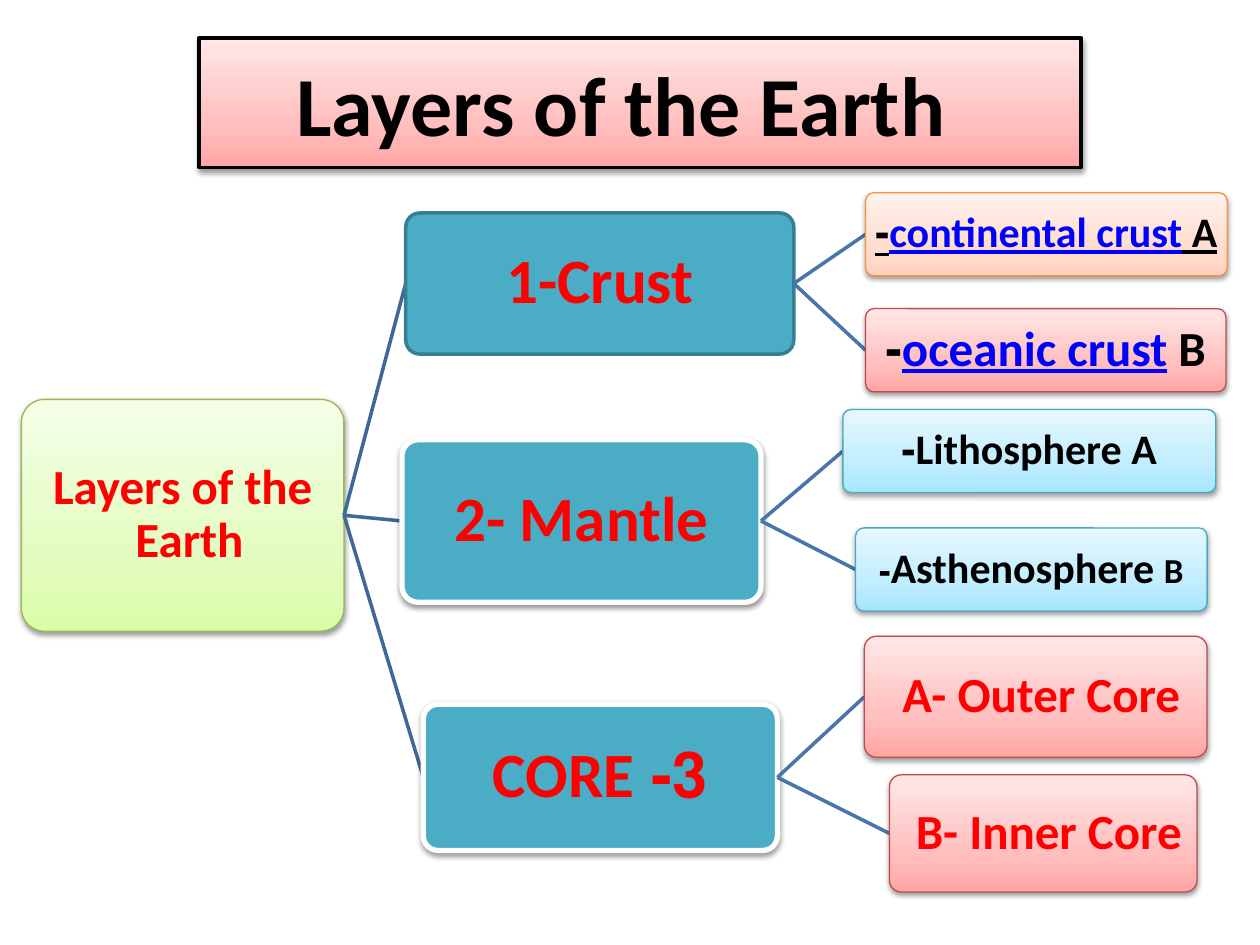
import copy
from dataclasses import dataclass
from typing import Any

import pptx
import pptx.dml.color
import pptx.enum.shapes
import pptx.enum.text
import pptx.oxml
import pptx.oxml.ns
import pptx.oxml.xmlchemy
import pptx.util

RGBColor = pptx.dml.color.RGBColor
Shapes = pptx.enum.shapes.MSO_SHAPE

BLACK = RGBColor(0x00, 0x00, 0x00)
WHITE = RGBColor(0xFF, 0xFF, 0xFF)
RED = RGBColor(0xFF, 0x00, 0x00)
BLUE = RGBColor(0x00, 0x00, 0xFF)
TEAL = RGBColor(0x4B, 0xAC, 0xC6)
DARK_TEAL = RGBColor(0x37, 0x7F, 0x92)
ROOT_LINK = RGBColor(0x3F, 0x67, 0x97)
LAYER_LINK = RGBColor(0x48, 0x75, 0xAC)
GREEN_EDGE = RGBColor(0x98, 0xB9, 0x55)
ORANGE_EDGE = RGBColor(0xF6, 0x92, 0x40)
PINK_EDGE = RGBColor(0xBF, 0x4C, 0x48)
SKY_EDGE = RGBColor(0x46, 0xAA, 0xC5)
GREENS = (RGBColor(0xDA, 0xFD, 0xA7), RGBColor(0xE4, 0xFC, 0xC2), RGBColor(0xF5, 0xFF, 0xE7))
ORANGES = (RGBColor(0xFF, 0xD2, 0xBD), RGBColor(0xFF, 0xDE, 0xD0), RGBColor(0xFF, 0xF2, 0xED))
PINKS = (RGBColor(0xFF, 0xA6, 0xA5), RGBColor(0xFF, 0xC0, 0xBF), RGBColor(0xFF, 0xE7, 0xE7))
SKIES = (RGBColor(0xA7, 0xE6, 0xFF), RGBColor(0xC1, 0xED, 0xFF), RGBColor(0xE7, 0xF8, 0xFF))

STOPS = (0, 0.35, 1)
WIDTH, HEIGHT = pptx.util.Inches(10), pptx.util.Inches(7.5)
COLUMNS, ROWS = 100, 75
SHADOW = (
    '<a:outerShdw xmlns:a="http://schemas.openxmlformats.org/drawingml/2006/main" '
    'blurRad="40000" dist="20000" dir="5400000" rotWithShape="0">'
    '<a:srgbClr val="000000"><a:alpha val="38000"/></a:srgbClr></a:outerShdw>'
)


@dataclass(frozen=True)
class Style:
    colors: tuple[RGBColor, ...]
    edge: RGBColor
    edge_width: float = 0.75
    shadow: bool = True
    inset: float = 0.02


@dataclass(frozen=True)
class Run:
    text: str
    size: int
    color: RGBColor = RED
    underline: bool = False


@dataclass(frozen=True)
class Box:
    column: float
    row: float
    columns: float
    rows: float
    style: Style
    runs: tuple[Run, ...]
    right_to_left: bool = False
    children: tuple["Box", ...] = ()


GREEN = Style(GREENS, GREEN_EDGE)
ORANGE = Style(ORANGES, ORANGE_EDGE)
PINK = Style(PINKS, PINK_EDGE)
SKY = Style(SKIES, SKY_EDGE)
FLAT = Style((TEAL,), DARK_TEAL, 2, False, 0.03)
FRAMED = Style((TEAL,), WHITE, 3, True, 0.03)
BANNER = Style(PINKS, BLACK, 2.25, True, 0.1)

CRUST = Box(32.2, 16.9, 30.8, 11.2, FLAT, (Run("1-Crust", 36),), children=(
    Box(68.7, 15.3, 28.7, 6.6, ORANGE,
        (Run("continental crust", 24, BLUE, True), Run(" A-", 24, BLACK, True)), True),
    Box(68.7, 24.5, 28.6, 6.6, PINK,
        (Run("oceanic crust", 28, BLUE, True), Run(" B-", 28, BLACK)), True),
))
MANTLE = Box(31.9, 34.9, 28.5, 12.9, FRAMED, (Run("2- Mantle", 36),), children=(
    Box(66.9, 32.5, 29.6, 6.6, SKY, (Run("Lithosphere A-", 24, BLACK),), True),
    Box(67.9, 41.9, 27.9, 6.6, SKY,
        (Run("Asthenosphere ", 24, BLACK), Run("B-", 20, BLACK)), True),
))
CORE = Box(33.6, 55.9, 28.1, 11.6, FRAMED, (Run("3- CORE", 36),), True, (
    Box(68.6, 50.5, 27.2, 9.6, PINK, (Run(" A- Outer Core", 28),)),
    Box(70.6, 61.5, 24.4, 9.3, PINK, (Run(" B- Inner Core", 28),)),
))
ROOT = Box(1.7, 31.7, 25.6, 18.4, GREEN, (Run("Layers of the Earth ", 28),), True,
           (CRUST, MANTLE, CORE))
TITLE = Box(15.8, 3, 70, 10.3, BANNER, (Run("Layers of the Earth", 48, BLACK),))


def across(columns: float) -> int:
    return round(WIDTH * columns / COLUMNS)


def down(rows: float) -> int:
    return round(HEIGHT * rows / ROWS)


def apply(target: Any, values: dict[str, Any]) -> None:
    for name, value in values.items():
        setattr(target, name, value)


def paint(shape: Any, style: Style) -> None:
    if len(style.colors) == 1:
        shape.fill.solid()
        shape.fill.fore_color.rgb = style.colors[0]
    else:
        shape.fill.gradient()
        shape.fill.gradient_angle = 90
        stop_list = shape._element.xpath(".//a:gsLst")[0]
        stop_list.append(copy.deepcopy(stop_list[0]))
        for stop, position, color in zip(shape.fill.gradient_stops, STOPS, style.colors):
            stop.position = position
            stop.color.rgb = color
    shape.line.color.rgb = style.edge
    shape.line.width = pptx.util.Pt(style.edge_width)
    shape.shadow.inherit = False
    if style.shadow:
        effects = shape._element.spPr.find(pptx.oxml.ns.qn("a:effectLst"))
        effects.append(pptx.oxml.parse_xml(SHADOW))


def write(shape: Any, box: Box, line_spacing: float) -> None:
    inset = pptx.util.Inches(box.style.inset)
    apply(shape.text_frame, {
        "word_wrap": True,
        "vertical_anchor": pptx.enum.text.MSO_ANCHOR.MIDDLE,
        "margin_left": inset, "margin_right": inset,
        "margin_top": inset, "margin_bottom": inset,
    })
    paragraph = shape.text_frame.paragraphs[0]
    apply(paragraph, {"alignment": pptx.enum.text.PP_ALIGN.CENTER, "line_spacing": line_spacing})
    if box.right_to_left:
        paragraph._p.get_or_add_pPr().set("rtl", "1")
    for item in box.runs:
        run = paragraph.add_run()
        run.text = item.text
        apply(run.font, {"name": "Calibri", "size": pptx.util.Pt(item.size),
                         "bold": True, "underline": item.underline})
        run.font.color.rgb = item.color


def draw_box(slide: Any, box: Box, kind: Any = Shapes.ROUNDED_RECTANGLE,
             line_spacing: float = 0.9) -> Any:
    shape = slide.shapes.add_shape(kind, across(box.column), down(box.row),
                                   across(box.columns), down(box.rows))
    if kind == Shapes.ROUNDED_RECTANGLE:
        shape.adjustments[0] = 0.1
    paint(shape, box.style)
    write(shape, box, line_spacing)
    return shape


def draw_link(slide: Any, parent: Box, child: Box, color: RGBColor) -> None:
    link = slide.shapes.add_connector(
        pptx.enum.shapes.MSO_CONNECTOR.STRAIGHT,
        across(parent.column + parent.columns), down(parent.row + parent.rows / 2),
        across(child.column), down(child.row + child.rows / 2))
    link.line.color.rgb = color
    link.line.width = pptx.util.Pt(2)
    link._element.spPr.append(pptx.oxml.xmlchemy.OxmlElement("a:effectLst"))


def draw_tree(slide: Any, box: Box, link_color: RGBColor) -> None:
    draw_box(slide, box)
    for child in box.children:
        draw_link(slide, box, child, link_color)
        draw_tree(slide, child, LAYER_LINK)


def main() -> None:
    presentation = pptx.Presentation()
    apply(presentation, {"slide_width": WIDTH, "slide_height": HEIGHT})
    slide = presentation.slides.add_slide(presentation.slide_layouts[6])
    draw_tree(slide, ROOT, ROOT_LINK)
    title = draw_box(slide, TITLE, Shapes.RECTANGLE, 1.0)
    title.text_frame.margin_right = pptx.util.Inches(0.4)
    presentation.save("out.pptx")


if __name__ == "__main__":
    main()
